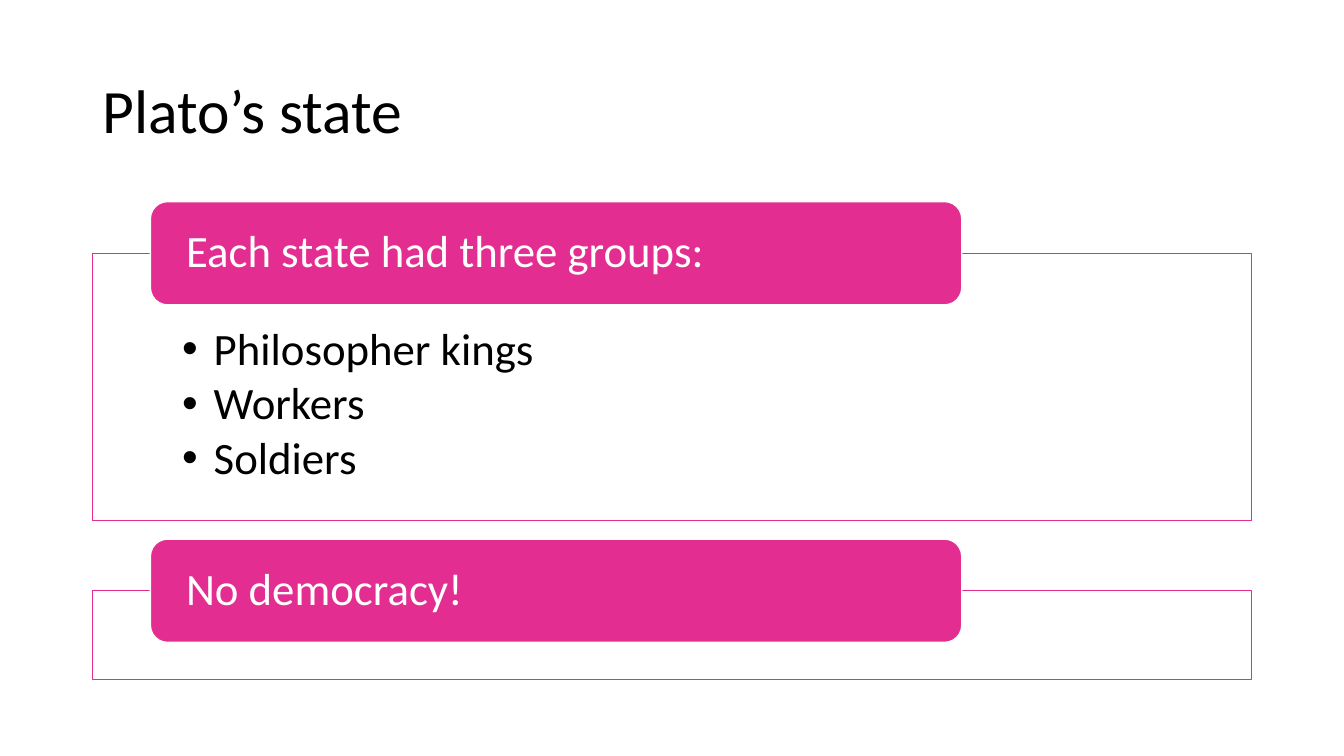
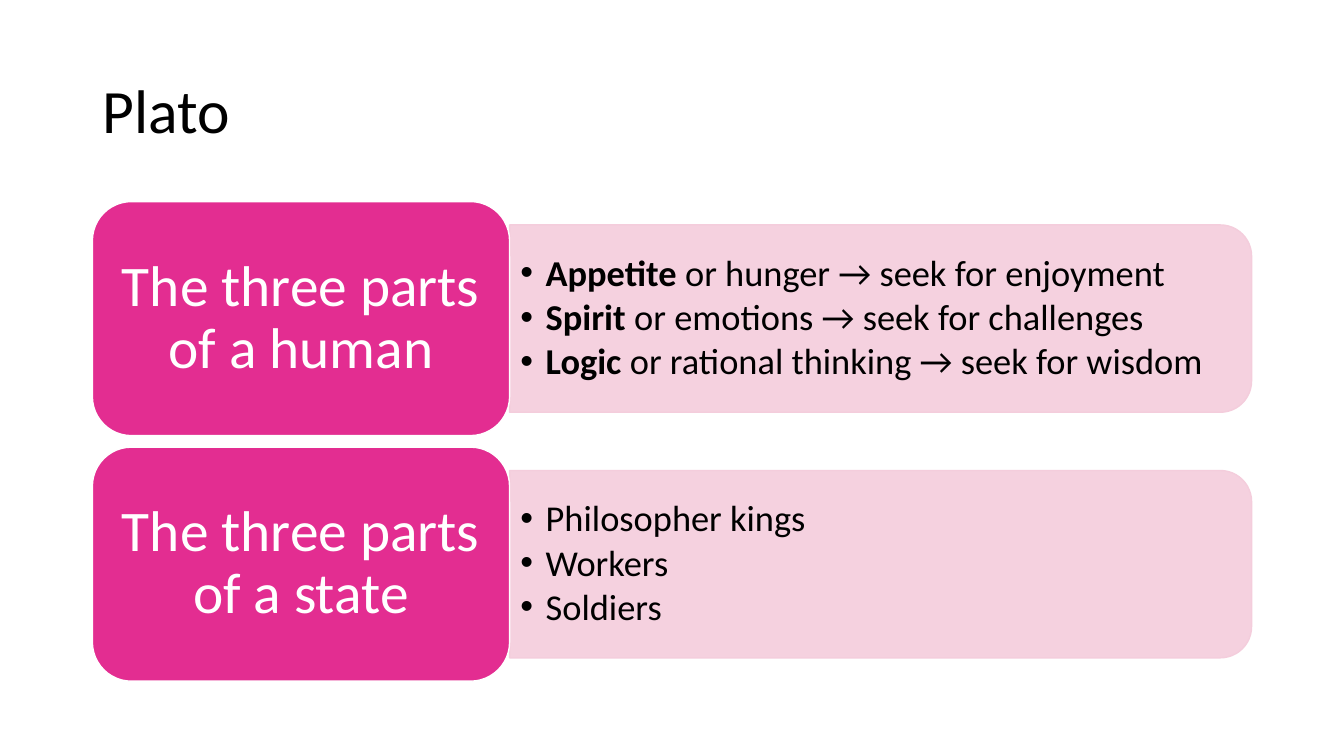
"""Build two slides on Plato's view of the human and the state."""
from dataclasses import dataclass
from typing import Optional

from lxml.etree import SubElement
from pptx import Presentation
from pptx.dml.color import RGBColor
from pptx.enum.shapes import MSO_SHAPE
from pptx.enum.text import MSO_ANCHOR, MSO_AUTO_SIZE, PP_ALIGN
from pptx.oxml.ns import qn
from pptx.presentation import Presentation as Deck
from pptx.shapes.autoshape import Shape
from pptx.slide import Slide
from pptx.text.text import TextFrame, _Paragraph
from pptx.util import Pt


@dataclass(frozen=True)
class Theme:
    """Colours, font and type sizes of the deck."""

    ink: RGBColor = RGBColor(0, 0, 0)
    white: RGBColor = RGBColor(255, 255, 255)
    pink: RGBColor = RGBColor.from_string("E32D91")
    pale: RGBColor = RGBColor.from_string("F4CDDC")
    font: str = "Calibri"
    title: float = 44
    head: float = 41
    text: float = 32
    note: float = 26
    lead: float = 0.9
    gap: float = 0.135


@dataclass(frozen=True)
class Box:
    """A place and size in points."""

    left: float
    top: float
    width: float
    height: float


@dataclass(frozen=True)
class Item:
    """A bullet with an optional bold start."""

    text: str
    bold: str = ""


@dataclass(frozen=True)
class Group:
    """A heading, its bullets and the height of its frame."""

    head: str
    items: tuple[Item, ...] = ()
    height: float = 0


THEME = Theme()
LEFT, TOP, WIDTH = 66, 144, 828
CLASSES = (Item("Philosopher kings"), Item("Workers"), Item("Soldiers"))
STATE = (
    Group("Each state had three groups:", CLASSES, 190.8),
    Group("No democracy!", height=63.4),
)
PARTS = (
    Group("The three parts of a human", (
        Item(" or hunger → seek for enjoyment", "Appetite"),
        Item(" or emotions → seek for challenges", "Spirit"),
        Item(" or rational thinking → seek for wisdom", "Logic"),
    )),
    Group("The three parts of a state", CLASSES),
)


def draw(slide: Slide, kind: MSO_SHAPE, box: Box, fill: RGBColor,
         line: RGBColor, alpha: Optional[int] = None) -> Shape:
    """Draw a filled shape with a thin outline."""
    shape = slide.shapes.add_shape(
        kind, Pt(box.left), Pt(box.top), Pt(box.width), Pt(box.height))
    shape.shadow.inherit = False
    shape.fill.solid()
    shape.fill.fore_color.rgb = fill
    shape.line.color.rgb = line
    shape.line.width = Pt(1)
    if alpha is not None:
        tint = shape.fill._xPr.find(qn("a:solidFill"))[0]
        SubElement(tint, qn("a:alpha"), val=str(alpha * 1000))
    return shape


def setup(frame: TextFrame, side: float, top: float, foot: float,
          anchor: MSO_ANCHOR = MSO_ANCHOR.MIDDLE) -> None:
    """Set the wrapping, margins and anchor of a text frame."""
    frame.word_wrap = True
    frame.auto_size = MSO_AUTO_SIZE.NONE
    frame.margin_left = frame.margin_right = Pt(side)
    frame.margin_top, frame.margin_bottom = Pt(top), Pt(foot)
    frame.vertical_anchor = anchor


def write(para: _Paragraph, text: str, size: float, tone: RGBColor,
          bold: bool = False) -> None:
    """Add one run to a paragraph."""
    run = para.add_run()
    run.text = text
    run.font.name = THEME.font
    run.font.size = Pt(size)
    run.font.bold = bold
    run.font.color.rgb = tone


def label(frame: TextFrame, text: str, size: float, tone: RGBColor,
          align: PP_ALIGN = PP_ALIGN.LEFT) -> None:
    """Write a single paragraph."""
    para = frame.paragraphs[0]
    para.alignment = align
    para.line_spacing = THEME.lead
    write(para, text, size, tone)


def bullets(frame: TextFrame, items: tuple[Item, ...], size: float,
            indent: float) -> None:
    """Write the items as a bulleted list."""
    for rank, item in enumerate(items):
        para = frame.add_paragraph() if rank else frame.paragraphs[0]
        para.alignment = PP_ALIGN.LEFT
        para.line_spacing = THEME.lead
        para.space_after = Pt(round(size * THEME.gap, 1))
        props = para._p.get_or_add_pPr()
        props.set("marL", str(Pt(indent)))
        props.set("indent", str(-Pt(indent)))
        SubElement(props, qn("a:buFont"), typeface="Arial")
        SubElement(props, qn("a:buChar"), char="•")
        if item.bold:
            write(para, item.bold, size, THEME.ink, True)
        write(para, item.text, size, THEME.ink)


def start(deck: Deck, text: str) -> Slide:
    """Add a slide and its title."""
    slide = deck.slides.add_slide(deck.slide_layouts[5])
    title = slide.shapes.title
    title.left, title.top = Pt(LEFT), Pt(28.8)
    title.width, title.height = Pt(WIDTH), Pt(104.4)
    setup(title.text_frame, 7.2, 3.6, 3.6)
    label(title.text_frame, text, THEME.title, THEME.ink)
    return slide


def framed(slide: Slide, groups: tuple[Group, ...]) -> None:
    """Stack frames with a heading tag over each top edge."""
    high, gap, top = 73.8, 13.4, TOP
    for group in groups:
        edge = top + high / 2
        frame = draw(slide, MSO_SHAPE.RECTANGLE,
                     Box(LEFT, edge, WIDTH, group.height),
                     THEME.white, THEME.pink, 90)
        setup(frame.text_frame, 64.2, 52.5, 18, MSO_ANCHOR.TOP)
        bullets(frame.text_frame, group.items, THEME.text, 22.5)
        tag = draw(slide, MSO_SHAPE.ROUNDED_RECTANGLE,
                   Box(LEFT + 41.4, top, 579.6, high),
                   THEME.pink, THEME.white)
        setup(tag.text_frame, 21.9, 0, 0)
        label(tag.text_frame, group.head, THEME.text, THEME.white)
        top = edge + group.height + gap


def paired(slide: Slide, groups: tuple[Group, ...]) -> None:
    """Stack heading blocks, each with a pale panel on its right."""
    wide, high, pitch, deep = 298, 167.2, 175.4, 133.8
    left, span = LEFT + wide, WIDTH - wide
    for rank, group in enumerate(groups):
        top = TOP + rank * pitch
        mid = top + high / 2
        panel = draw(slide, MSO_SHAPE.ROUND_2_SAME_RECTANGLE,
                     Box(left + (span - deep) / 2, mid - span / 2, deep, span),
                     THEME.pale, THEME.pale, 90)
        panel.rotation = 90
        area = slide.shapes.add_textbox(
            Pt(left), Pt(mid - 60.5), Pt(span - 6.5), Pt(121))
        setup(area.text_frame, 7.8, 3.9, 3.9)
        bullets(area.text_frame, group.items, THEME.note, 18)
        block = draw(slide, MSO_SHAPE.ROUNDED_RECTANGLE,
                     Box(LEFT, top, wide, high), THEME.pink, THEME.white)
        setup(block.text_frame, 12.3, 6.2, 6.2)
        label(block.text_frame, group.head, THEME.head, THEME.white,
              PP_ALIGN.CENTER)


def main() -> None:
    """Build and save the deck."""
    deck = Presentation()
    deck.slide_width, deck.slide_height = Pt(960), Pt(540)
    framed(start(deck, "Plato’s state"), STATE)
    paired(start(deck, "Plato"), PARTS)
    deck.save("out.pptx")


if __name__ == "__main__":
    main()
